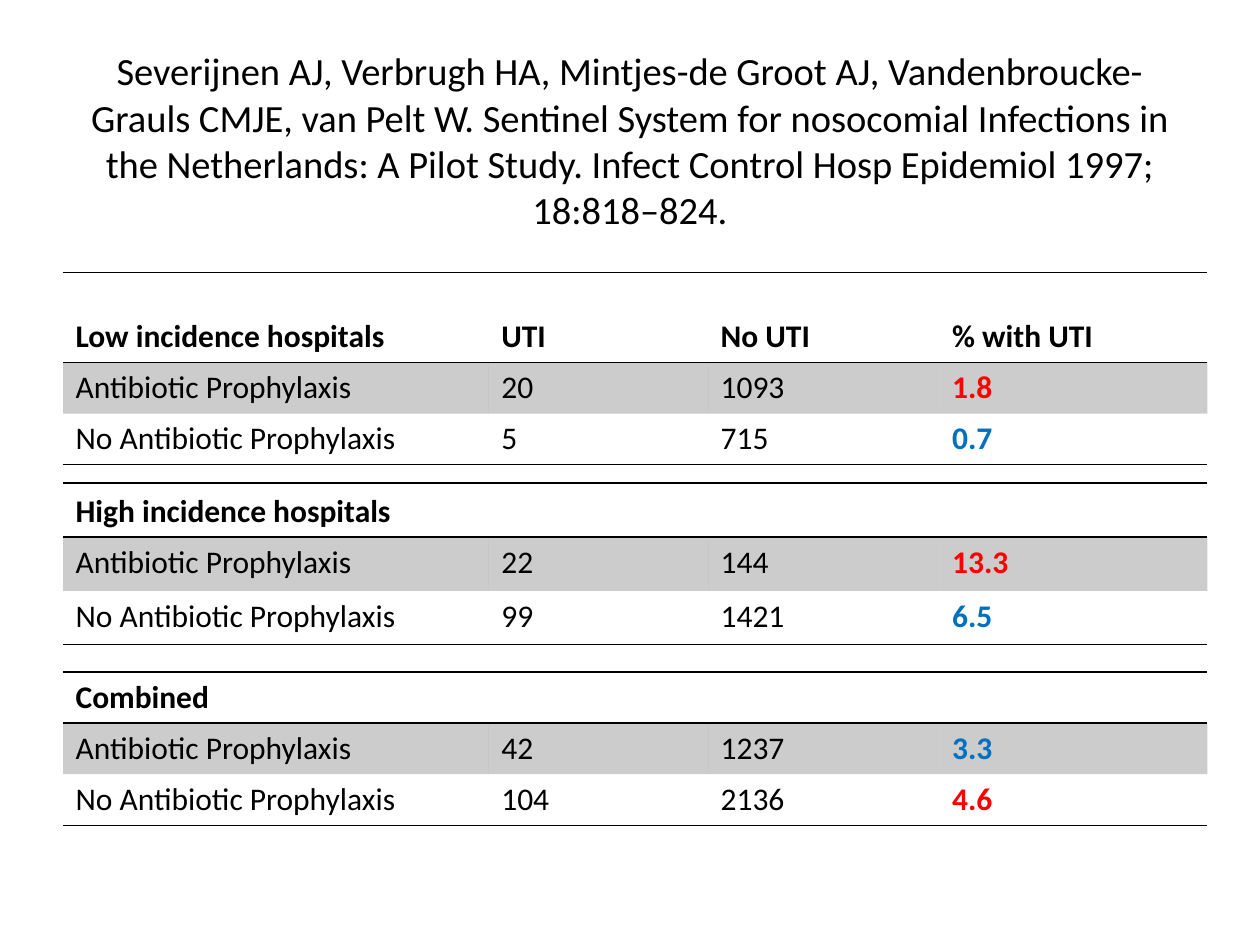
from lxml.etree import SubElement
from pptx import Presentation
from pptx.dml.color import RGBColor as RGB
from pptx.enum.text import MSO_ANCHOR as Anchor, PP_ALIGN as Align
from pptx.oxml.ns import qn
from pptx.util import Pt

CITATION = (
    "Severijnen AJ, Verbrugh HA, Mintjes-de Groot AJ, Vandenbroucke-Grauls CMJE, "
    "van Pelt W. Sentinel System for nosocomial Infections in the Netherlands: "
    "A Pilot Study. Infect Control Hosp Epidemiol 1997; 18:818–824."
)
COLORS = {"ink": "000000", "higher": "FF0000", "lower": "0070C0"}
TREATED, UNTREATED = "Antibiotic Prophylaxis", "No Antibiotic Prophylaxis"
HOSPITAL_GROUPS = [
    {
        "top": 155.7,
        "heights": (51.4, 29.2, 29.2),
        "rows": [
            ("Low incidence hospitals", "UTI", "No UTI", "% with UTI"),
            (TREATED, "20", "1093", "1.8"),
            (UNTREATED, "5", "715", "0.7"),
        ],
    },
    {
        "top": 276,
        "heights": (30.8, 30.8, 30.8),
        "rows": [
            ("High incidence hospitals", "", "", ""),
            (TREATED, "22", "144", "13.3"),
            (UNTREATED, "99", "1421", "6.5"),
        ],
    },
    {
        "top": 384,
        "heights": (29.2, 29.2, 29.2),
        "rows": [
            ("Combined", "", "", ""),
            (TREATED, "42", "1237", "3.3"),
            (UNTREATED, "104", "2136", "4.6"),
        ],
    },
]
LEFT = 36
COLUMN_WIDTHS = (243.3, 125.3, 132.3, 153)
RULED_EDGES = {0: ("lnT", "lnB"), 1: ("lnT",), 2: ("lnB",)}
NO_STYLE = "{2D5ABB26-0587-4C30-8999-92F81FD0307C}"


def style_text(paragraph, size, color="ink", bold=False):
    font = paragraph.font
    font.name, font.size, font.bold = "Calibri", Pt(size), bold
    font.color.rgb = RGB.from_string(COLORS[color])


def rule_cell(cell, ruled):
    properties = cell._tc.get_or_add_tcPr()
    for edge in ("lnL", "lnR", "lnT", "lnB"):
        line = SubElement(properties, qn(f"a:{edge}"), w=str(Pt(1)))
        if edge in ruled:
            ink = SubElement(line, qn("a:solidFill"))
            SubElement(ink, qn("a:srgbClr"), val=COLORS["ink"])
        else:
            SubElement(line, qn("a:noFill"))


def shade_cell(cell):
    cell.fill.solid()
    cell.fill.fore_color.rgb = RGB.from_string(COLORS["ink"])
    ink = cell._tc.tcPr.find(qn("a:solidFill")).find(qn("a:srgbClr"))
    SubElement(ink, qn("a:alpha"), val="20000")


def add_group(slide, group):
    rows, heights = group["rows"], group["heights"]
    table = slide.shapes.add_table(
        len(rows), len(COLUMN_WIDTHS), Pt(LEFT), Pt(group["top"]),
        Pt(sum(COLUMN_WIDTHS)), Pt(sum(heights)),
    ).table
    table.first_row = table.horz_banding = False
    table._tbl.tblPr.find(qn("a:tableStyleId")).text = NO_STYLE
    for column, width in zip(table.columns, COLUMN_WIDTHS):
        column.width = Pt(width)
    highest = max(float(row[-1]) for row in rows[1:])

    for r, (row, height) in enumerate(zip(rows, heights)):
        table.rows[r].height = Pt(height)
        for c, value in enumerate(row):
            cell = table.cell(r, c)
            cell.text = value
            cell.vertical_anchor = Anchor.BOTTOM if r == 0 else Anchor.TOP
            is_rate = r > 0 and c == len(row) - 1
            color = "ink"
            if is_rate:
                color = "higher" if float(value) == highest else "lower"
            style_text(cell.text_frame.paragraphs[0], 18, color, r == 0 or is_rate)
            rule_cell(cell, RULED_EDGES[r])
            if r == 1:
                shade_cell(cell)
            else:
                cell.fill.background()


def main():
    deck = Presentation()
    deck.slide_width, deck.slide_height = Pt(720), Pt(540)
    slide = deck.slides.add_slide(deck.slide_layouts[6])

    citation = slide.shapes.add_textbox(Pt(LEFT), Pt(21.6), Pt(648), Pt(116.6)).text_frame
    citation.word_wrap = True
    citation.vertical_anchor = Anchor.MIDDLE
    citation.text = CITATION
    citation.paragraphs[0].alignment = Align.CENTER
    style_text(citation.paragraphs[0], 22)

    for group in HOSPITAL_GROUPS:
        add_group(slide, group)
    deck.save("out.pptx")


if __name__ == "__main__":
    main()
